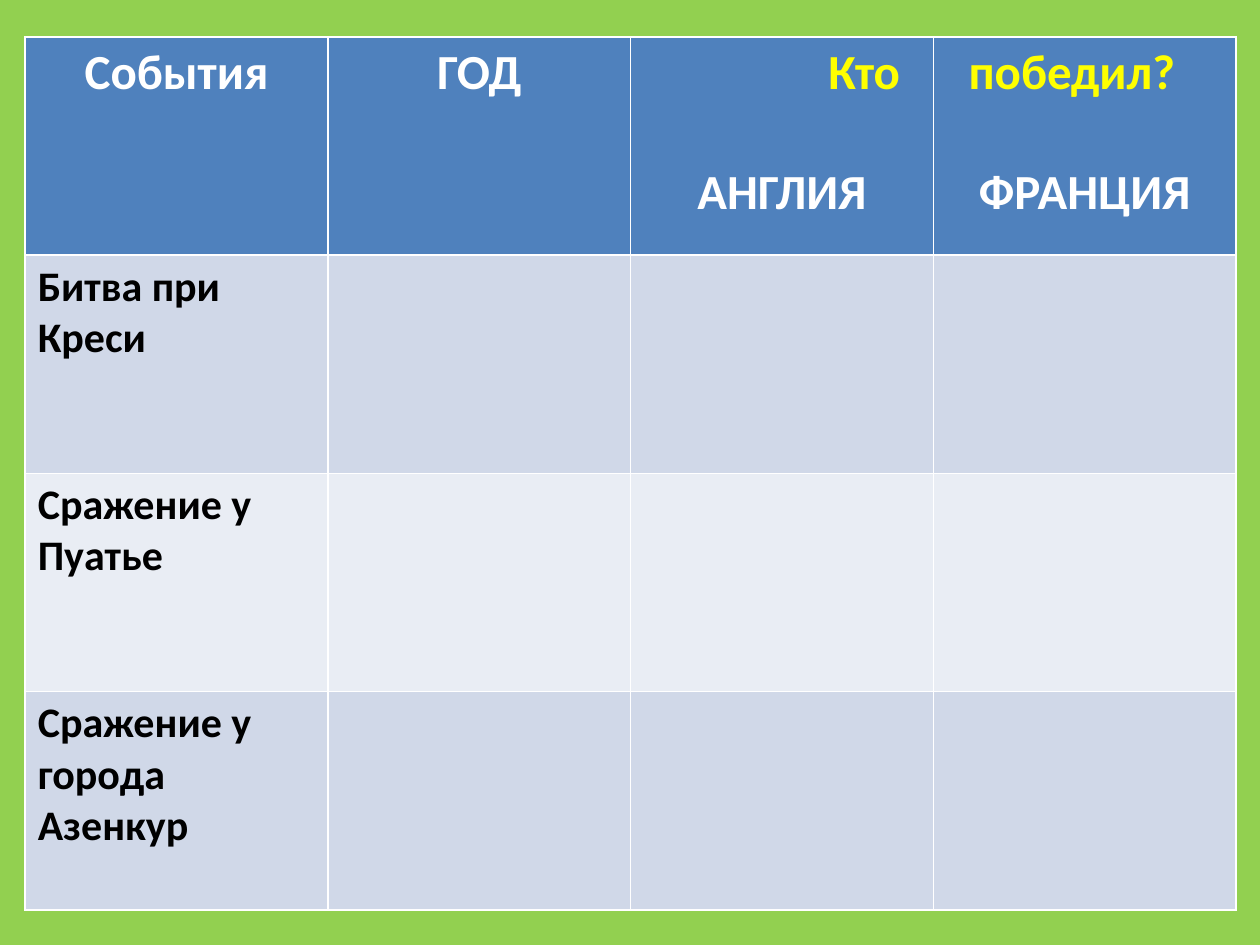
from pptx import Presentation
from pptx.dml.color import RGBColor
from pptx.enum.text import PP_ALIGN
from pptx.util import Inches, Pt

CENTER, LEFT = PP_ALIGN.CENTER, PP_ALIGN.LEFT
WIDTH, HEIGHT = 10, 7.5
BLANK_LAYOUT = 6
GREEN, BLUE, WHITE, YELLOW, BLACK = "92D050", "4F81BD", "FFFFFF", "FFFF00", "000000"
BANDS = ["D0D8E8", "E9EDF4"]
HEADER_SIZE, BODY_SIZE, SKIPPED_LINE = 28, 24, 34

BATTLES = ["Битва при Креси", "Сражение у Пуатье", "Сражение у города Азенкур"]
HEADINGS = ["События", "ГОД"]
WINNERS = [("Кто", 1.47, "АНГЛИЯ"), ("победил?", 0.18, "ФРАНЦИЯ")]


def color(value):
    return RGBColor.from_string(value)


class SlideBuilder:
    font = "Calibri"

    def __init__(self, presentation):
        self.slide = presentation.slides.add_slide(presentation.slide_layouts[BLANK_LAYOUT])

    def background(self, fill):
        self.slide.background.fill.solid()
        self.slide.background.fill.fore_color.rgb = color(fill)

    def table(self, rows, columns, left, top, width, height):
        table = self.slide.shapes.add_table(
            rows, columns,
            Inches(left * WIDTH), Inches(top * HEIGHT),
            Inches(width * WIDTH), Inches(height * HEIGHT),
        ).table
        for r in range(rows):
            for c in range(columns):
                fill = table.cell(r, c).fill
                fill.solid()
                fill.fore_color.rgb = color(BLUE if r == 0 else BANDS[(r - 1) % 2])
        return table

    def text(self, paragraph, words, size, ink, align=LEFT, indent=0, before=0):
        paragraph.text = words
        paragraph.alignment = align
        paragraph.space_before = Pt(before)
        if indent:
            paragraph._p.get_or_add_pPr().set("marL", str(Inches(indent)))
        font = paragraph.font
        font.name, font.size, font.bold = self.font, Pt(size), True
        font.color.rgb = color(ink)


def main():
    presentation = Presentation()
    presentation.slide_width, presentation.slide_height = Inches(WIDTH), Inches(HEIGHT)
    builder = SlideBuilder(presentation)
    builder.background(GREEN)
    battles_table = builder.table(len(BATTLES) + 1, len(HEADINGS) + len(WINNERS),
                                  left=0.02, top=0.039, width=0.961, height=0.924)

    for column, heading in enumerate(HEADINGS):
        first = battles_table.cell(0, column).text_frame.paragraphs[0]
        builder.text(first, heading, HEADER_SIZE, WHITE, CENTER)

    for column, (question, indent, country) in enumerate(WINNERS, len(HEADINGS)):
        frame = battles_table.cell(0, column).text_frame
        builder.text(frame.paragraphs[0], question, HEADER_SIZE, YELLOW, indent=indent)
        builder.text(frame.add_paragraph(), country, HEADER_SIZE, WHITE, CENTER,
                     before=SKIPPED_LINE)

    for row, battle in enumerate(BATTLES, 1):
        first = battles_table.cell(row, 0).text_frame.paragraphs[0]
        builder.text(first, battle, BODY_SIZE, BLACK)

    presentation.save("out.pptx")


if __name__ == "__main__":
    main()
